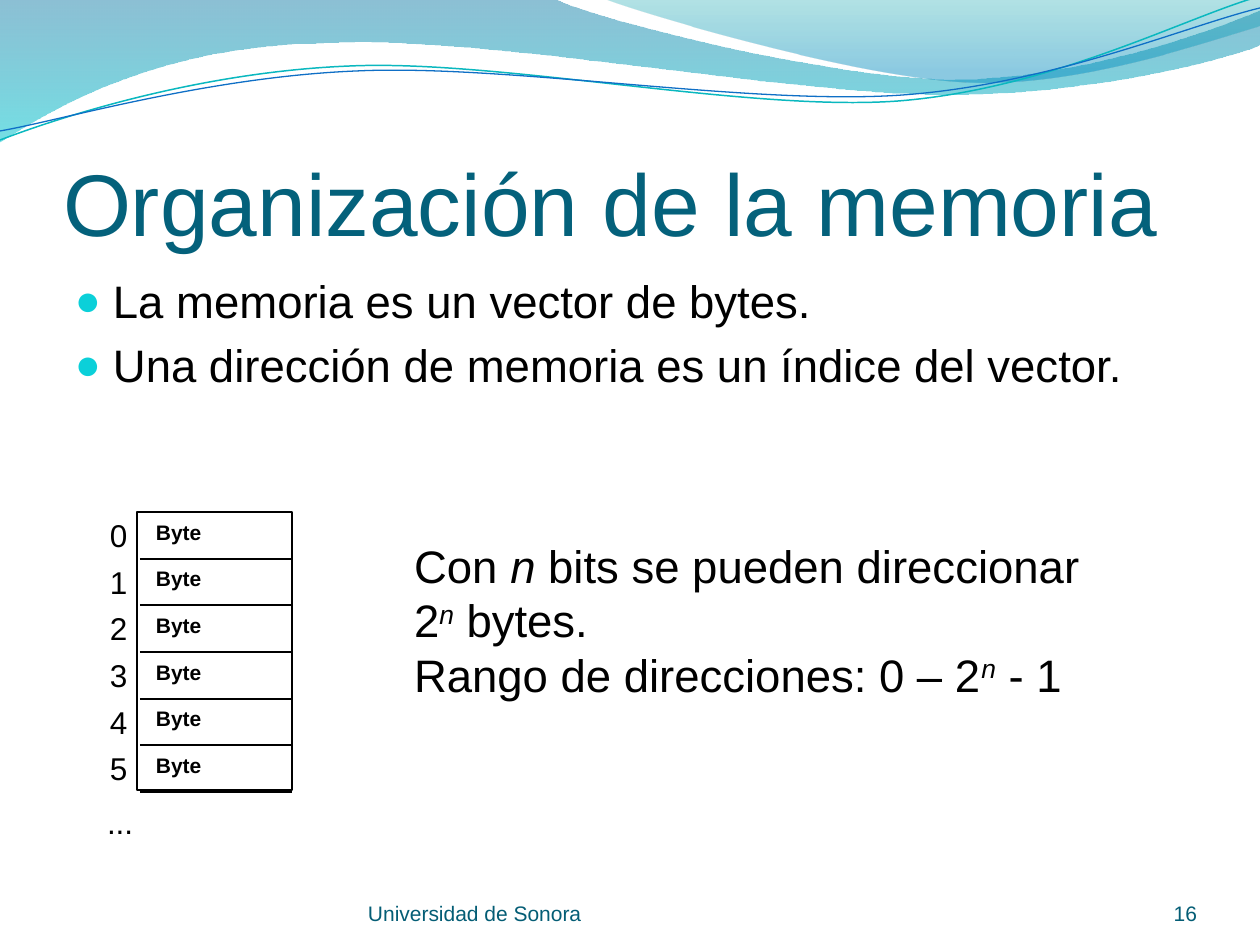
import pptx
import pptx.dml.color
import pptx.enum.shapes
import pptx.enum.text
import pptx.oxml.ns
import pptx.util
from lxml import etree

PX = 914400 / 126
FONT = "Arial"
BLACK = "000000"
FOOTER = "045D75"
ALIGN = pptx.enum.text.PP_ALIGN
ANCHOR = pptx.enum.text.MSO_ANCHOR
qn = pptx.oxml.ns.qn


def px(value):
    return pptx.util.Emu(round(value * PX))


def color(value):
    return pptx.dml.color.RGBColor.from_string(value)


def write(shape, paras, size, hue=BLACK, bold=False, align=ALIGN.LEFT, anchor=ANCHOR.TOP,
          insets=(0, 0, 0, 0), leading=None, before=None, bullet=None):
    """Fill a shape with paragraphs, each a list of (text, style) spans; "i" is italic, "^" raised."""
    frame = shape.text_frame
    frame.word_wrap = True
    frame.auto_size = pptx.enum.text.MSO_AUTO_SIZE.NONE
    frame.vertical_anchor = anchor
    frame.margin_left, frame.margin_top, frame.margin_right, frame.margin_bottom = map(px, insets)
    for index, spans in enumerate(paras):
        para = frame.add_paragraph() if index else frame.paragraphs[0]
        para.alignment = align
        if leading:
            para.line_spacing = pptx.util.Pt(leading)
        if before:
            para.space_before = pptx.util.Pt(before)
        if bullet:
            add_bullet(para, bullet)
        for text, style in spans:
            span = para.add_run()
            span.text = text
            font = span.font
            font.name, font.size, font.bold = FONT, pptx.util.Pt(size), bold
            font.italic = "i" in style
            font.color.rgb = color(hue)
            if "^" in style:
                span._r.get_or_add_rPr().set("baseline", "30000")


def add_bullet(para, hue, indent=38):
    props = para._p.get_or_add_pPr()
    props.set("marL", str(px(indent)))
    props.set("indent", str(-px(indent)))
    tint = etree.SubElement(props, qn("a:buClr"))
    etree.SubElement(tint, qn("a:srgbClr"), val=hue)
    etree.SubElement(props, qn("a:buSzPct"), val="95000")
    etree.SubElement(props, qn("a:buFont"), typeface=FONT)
    etree.SubElement(props, qn("a:buChar"), char="●")


def add_text(page, box, paras, **style):
    shape = page.shapes.add_textbox(*map(px, box))
    write(shape, paras, **style)
    return shape


def plain(text):
    return [(text, "")]


def add_outline(page, start, steps, closed):
    """Draw a route whose steps hold one point for a line or three for a cubic curve."""
    builder = page.shapes.build_freeform(*map(px, start))
    builder.add_line_segments([tuple(map(px, point)) for step in steps for point in step],
                              close=closed)
    shape = builder.convert_to_shape()
    shape.shadow.inherit = False
    segments = iter(list(shape.element.iter(qn("a:lnTo"))))
    for step in steps:
        lines = [next(segments) for _ in step]
        if len(step) == 3:
            curve = etree.Element(qn("a:cubicBezTo"))
            lines[0].addprevious(curve)
            for line in lines:
                curve.append(line[0])
                line.getparent().remove(line)
    return shape


def add_wave(page, start, steps, stops):
    shape = add_outline(page, start, steps, True)
    shape.line.fill.background()
    shape.fill.gradient()
    shape.fill.gradient_angle = 270
    for stop, (position, hue, _) in zip(shape.fill.gradient_stops, stops):
        stop.position = position
        stop.color.rgb = color(hue)
    for tint, (_, _, opacity) in zip(shape.element.spPr.iter(qn("a:srgbClr")), stops):
        etree.SubElement(tint, qn("a:alpha"), val=str(opacity * 1000))


def add_strand(page, start, steps, hue, width):
    shape = add_outline(page, start, steps, False)
    shape.fill.background()
    shape.line.color.rgb = color(hue)
    shape.line.width = pptx.util.Pt(width)


def add_waves(page):
    add_wave(page, (0, 0), [
        [(554, -1)],
        [(600, 21), (837, 79), (955, 79)],
        [(1075, 79), (1207, 33), (1260, 11)],
        [(1261, 45)],
        [(1239, 55), (1096, 96), (940, 94)],
        [(784, 94), (481, 35), (324, 43)],
        [(163, 45), (58, 105), (-1, 142)],
        [(0, 0)],
    ], [(0, "0074A1", 45), (1, "00C6CF", 55)])
    add_wave(page, (604, -1), [
        [(641, 14), (859, 78), (969, 82)],
        [(1079, 87), (1211, 40), (1260, 26)],
        [(1260, 0)],
        [(604, -1)],
    ], [(0, "00A1A9", 30), (0.8, "008BBF", 45)])
    add_strand(page, (0, 140), [
        [(60, 117), (199, 72), (349, 66)],
        [(498, 59), (747, 112), (898, 101)],
        [(1050, 89), (1182, 19), (1257, -3)],
    ], "0AB8BF", 0.85)
    add_strand(page, (0, 131), [
        [(59, 121), (207, 77), (357, 71)],
        [(508, 64), (752, 106), (903, 95)],
        [(1053, 84), (1186, 26), (1260, 8)],
    ], "0F6FC6", 0.75)


def add_title(page, box, text):
    title = page.shapes.title
    title.left, title.top, title.width, title.height = map(px, box)
    write(title, [plain(text)], size=50, hue="04617B", anchor=ANCHOR.BOTTOM, insets=(0, 6, 0, 0))


def add_rule(page, left, right, y):
    rule = page.shapes.add_connector(pptx.enum.shapes.MSO_CONNECTOR.STRAIGHT,
                                     px(left), px(y), px(right), px(y))
    rule.line.color.rgb = color(BLACK)
    rule.line.width = pptx.util.Pt(1)
    etree.SubElement(rule.element.spPr, qn("a:effectLst"))


def add_memory(page, box, rows):
    """Column of byte cells with their addresses on the left."""
    left, top, width, height = box
    cells = page.shapes.add_shape(pptx.enum.shapes.MSO_SHAPE.RECTANGLE, *map(px, box))
    cells.shadow.inherit = False
    cells.fill.solid()
    cells.fill.fore_color.rgb = color("FFFFFF")
    cells.line.color.rgb = color(BLACK)
    cells.line.width = pptx.util.Pt(1)
    pitch = (height + 2) / rows
    insets = (3, 4, 3, 4)
    address = dict(size=18, leading=21, insets=insets)
    for row in range(rows):
        y = top + row * pitch
        add_rule(page, left + 3, left + width, y + pitch)
        add_text(page, (left - 30, y + 1, 69, 54), [plain(str(row))], **address)
        add_text(page, (left + 16, y + 4, 176, 42), [plain("Byte")],
                 size=12, bold=True, leading=14, insets=insets)
    add_text(page, (left - 33, top + height + 10, 69, 54), [plain("...")], **address)


def main():
    deck = pptx.Presentation()
    deck.slide_width, deck.slide_height = px(1260), px(945)
    page = deck.slides.add_slide(deck.slide_layouts[5])
    add_waves(page)
    add_title(page, (63, 96, 1134, 158), "Organización de la memoria")
    insets = (12, 6, 12, 6)
    add_text(page, (63, 267, 1134, 605),
             [plain("La memoria es un vector de bytes."),
              plain("Una dirección de memoria es un índice del vector.")],
             size=26, insets=insets, before=5.5, bullet="0BD0D9")
    add_text(page, (402, 532, 735, 178),
             [[("Con ", ""), ("n", "i"), (" bits se pueden direccionar 2", ""),
               ("n", "i^"), (" bytes.", "")],
              [("Rango de direcciones: 0 – 2", ""), ("n", "i^"), (" - 1", "")]],
             size=26, insets=insets)
    add_memory(page, (137, 512, 155, 278), 6)
    footer = dict(size=12, hue=FOOTER, anchor=ANCHOR.BOTTOM)
    add_text(page, (368, 876, 462, 50), [plain("Universidad de Sonora")], **footer)
    add_text(page, (1092, 876, 105, 50), [plain("16")], align=ALIGN.RIGHT, **footer)
    deck.save("out.pptx")


if __name__ == "__main__":
    main()
